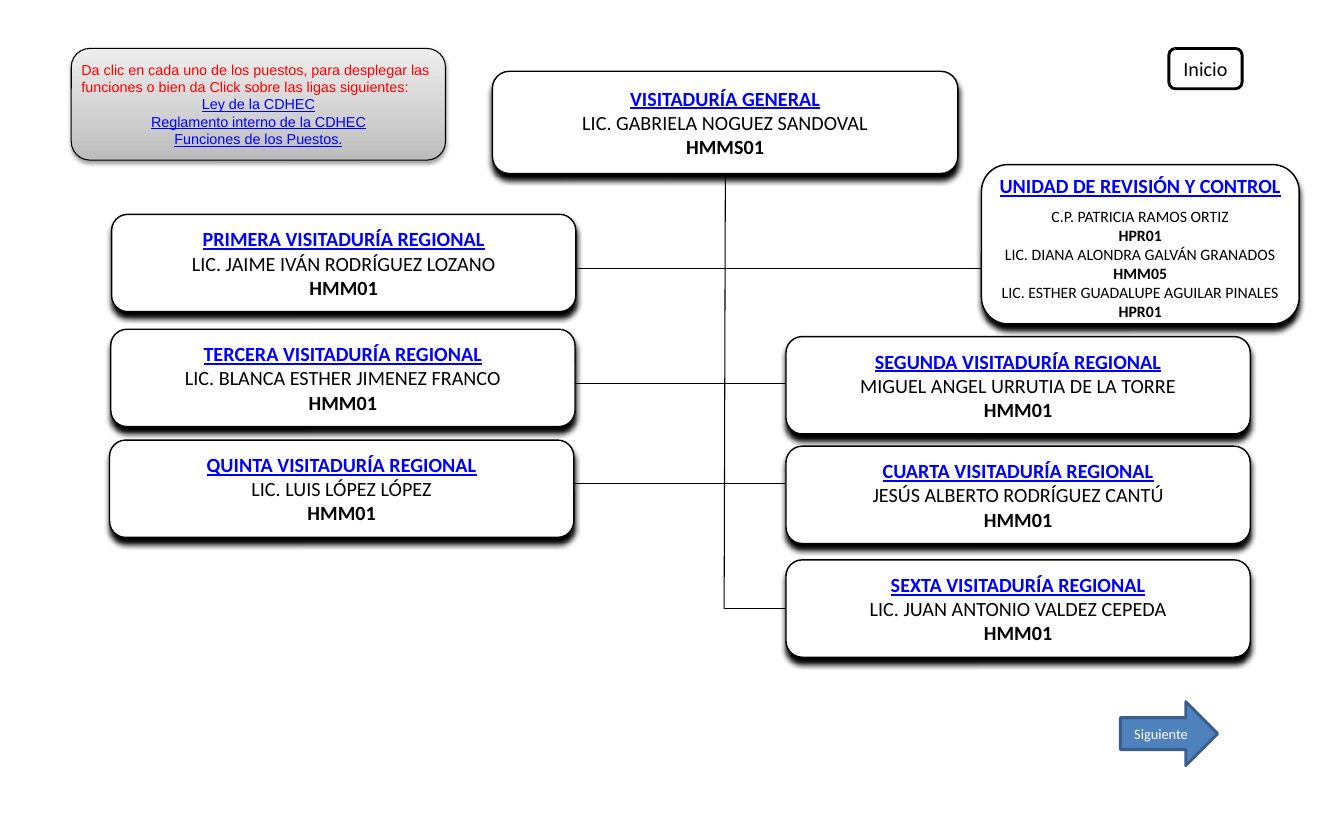
from lxml import etree
from pptx import Presentation
from pptx import util as u
from pptx.dml.color import RGBColor
from pptx.enum import shapes, text
from pptx.oxml.ns import qn

COLORS = {"ink": "000000", "paper": "FFFFFF", "link": "0000FF", "notice": "FF0000",
          "arrow": "4F81BD", "arrow_edge": "3A5F8C",
          "panel_top": "EEEEEE", "panel_bottom": "BDBDBD"}
RGB = {name: RGBColor.from_string(value) for name, value in COLORS.items()}
ROUND = shapes.MSO_SHAPE.ROUNDED_RECTANGLE
CENTER = text.PP_ALIGN.CENTER

TITLE = {"color": "link", "size": 14, "bold": True, "underline": True}
NAME = {"color": "ink", "size": 14}
CODE = {"color": "ink", "size": 14, "bold": True}
SMALL_NAME = {**NAME, "size": 11}
SMALL_CODE = {**CODE, "size": 11}
NOTICE = {"name": "Arial", "color": "notice", "size": 10}
LINK = {"name": "Arial", "color": "link", "size": 10, "underline": True}


def write(tf, lines):
    for i, (line, style) in enumerate(lines):
        p = tf.paragraphs[0] if i == 0 else tf.add_paragraph()
        p.alignment = CENTER
        r = p.add_run()
        r.text = line
        values = {"name": "Calibri", **style}
        r.font.color.rgb = RGB[values.pop("color")]
        values["size"] = u.Pt(values["size"])
        for key, value in values.items():
            setattr(r.font, key, value)


def add_box(kind, at, fill, line, width, shadow=None):
    sp = s.shapes.add_shape(kind, *map(u.Cm, at))
    sp.fill.solid()
    sp.fill.fore_color.rgb = RGB[fill]
    sp.line.color.rgb = RGB[line]
    sp.line.width = u.Pt(width)
    sp.shadow.inherit = False
    if shadow:
        blur, dist, alpha = shadow
        effects = sp._element.spPr.find(qn("a:effectLst"))
        outer = etree.SubElement(effects, qn("a:outerShdw"), blurRad=str(u.Pt(blur)),
                                 dist=str(u.Pt(dist)), dir="5400000", rotWithShape="0")
        color = etree.SubElement(outer, qn("a:srgbClr"), val=COLORS["ink"])
        etree.SubElement(color, qn("a:alpha"), val=str(alpha * 1000))
    return sp


prs = Presentation()
prs.slide_width, prs.slide_height = u.Cm(33), u.Cm(20)
s = prs.slides.add_slide(prs.slide_layouts[6])

for ends in [(14.02, 6.6, 28.02, 6.6), (13, 9.42, 23.52, 9.42),
             (17.81, 4.29, 17.78, 14.94), (14.02, 11.86, 21.11, 11.86),
             (17.78, 14.94, 20.7, 14.94)]:
    cn = s.shapes.add_connector(shapes.MSO_CONNECTOR.STRAIGHT, *map(u.Cm, ends))
    cn.line.color.rgb = RGB["ink"]
    cn.line.width = u.Pt(0.75)
    etree.SubElement(cn._element.spPr, qn("a:effectLst"))

REGION = (11.4, 2.39)
offices = [
    ((12.09, 1.75, 11.43, 2.51), "VISITADURÍA GENERAL", "LIC. GABRIELA NOGUEZ SANDOVAL", "HMMS01"),
    ((2.74, 5.26, *REGION), "PRIMERA VISITADURÍA REGIONAL", "LIC. JAIME IVÁN RODRÍGUEZ LOZANO", "HMM01"),
    ((19.3, 8.26, *REGION), "SEGUNDA VISITADURÍA REGIONAL", "MIGUEL ANGEL URRUTIA DE LA TORRE", "HMM01"),
    ((2.72, 8.08, *REGION), "TERCERA VISITADURÍA REGIONAL", "LIC. BLANCA ESTHER JIMENEZ FRANCO", "HMM01"),
    ((19.3, 10.95, *REGION), "CUARTA VISITADURÍA REGIONAL", "JESÚS ALBERTO RODRÍGUEZ CANTÚ", "HMM01"),
    ((2.69, 10.8, *REGION), "QUINTA VISITADURÍA REGIONAL", "LIC. LUIS LÓPEZ LÓPEZ", "HMM01"),
    ((19.3, 13.74, *REGION), "SEXTA VISITADURÍA REGIONAL", "LIC. JUAN ANTONIO VALDEZ CEPEDA", "HMM01"),
]
cards = [(at, 0.23, [(title, TITLE), (name, NAME), (code, CODE)])
         for at, title, name, code in offices]

staff = [("C.P. PATRICIA RAMOS ORTIZ", "HPR01"),
         ("LIC. DIANA ALONDRA GALVÁN GRANADOS", "HMM05"),
         ("LIC. ESTHER GUADALUPE AGUILAR PINALES", "HPR01")]
unit_lines = [("UNIDAD DE REVISIÓN Y CONTROL", TITLE)]
for name, code in staff:
    unit_lines += [(name, SMALL_NAME), (code, SMALL_CODE)]
cards.append(((24.1, 4.04, 7.8, 3.91), 0.1, unit_lines))

for at, bottom, lines in cards:
    sp = add_box(ROUND, at, "paper", "ink", 1, (4, 4, 100))
    tf = sp.text_frame
    margins = {"margin_left": 0.43, "margin_right": 0.43,
               "margin_top": 0.23, "margin_bottom": bottom}
    for key, value in margins.items():
        setattr(tf, key, u.Cm(value))
    tf.word_wrap = False
    write(tf, lines)
tf.paragraphs[1].space_before = u.Pt(6)

home = add_box(ROUND, (28.7, 1.19, 1.8, 0.99), "paper", "ink", 2)
write(home.text_frame, [("Inicio", NAME)])

panel = add_box(ROUND, (1.75, 1.19, 9.19, 2.74), "paper", "ink", 0.75, (3.1, 1.6, 38))
panel.fill.gradient()
panel.fill.gradient_angle = 90
for stop, shade in zip(panel.fill.gradient_stops, ["panel_bottom", "panel_top"]):
    stop.color.rgb = RGB[shade]

tb = s.shapes.add_textbox(*map(u.Cm, (1.75, 1.37, 9.19, 2.39)))
tf = tb.text_frame
tf.word_wrap = True
write(tf, [("Da clic en cada uno de los puestos, para desplegar las funciones "
            "o bien da Click sobre las ligas siguientes:", NOTICE),
           ("Ley de la CDHEC", LINK),
           ("Reglamento interno de la CDHEC", LINK),
           ("Funciones de los Puestos.", LINK)])
tf.paragraphs[0].alignment = text.PP_ALIGN.LEFT

following = add_box(shapes.MSO_SHAPE.RIGHT_ARROW, (27.51, 17.22, 2.39, 1.57),
                    "arrow", "arrow_edge", 2)
write(following.text_frame, [("Siguiente", {"color": "paper", "size": 10})])

prs.save("out.pptx")
